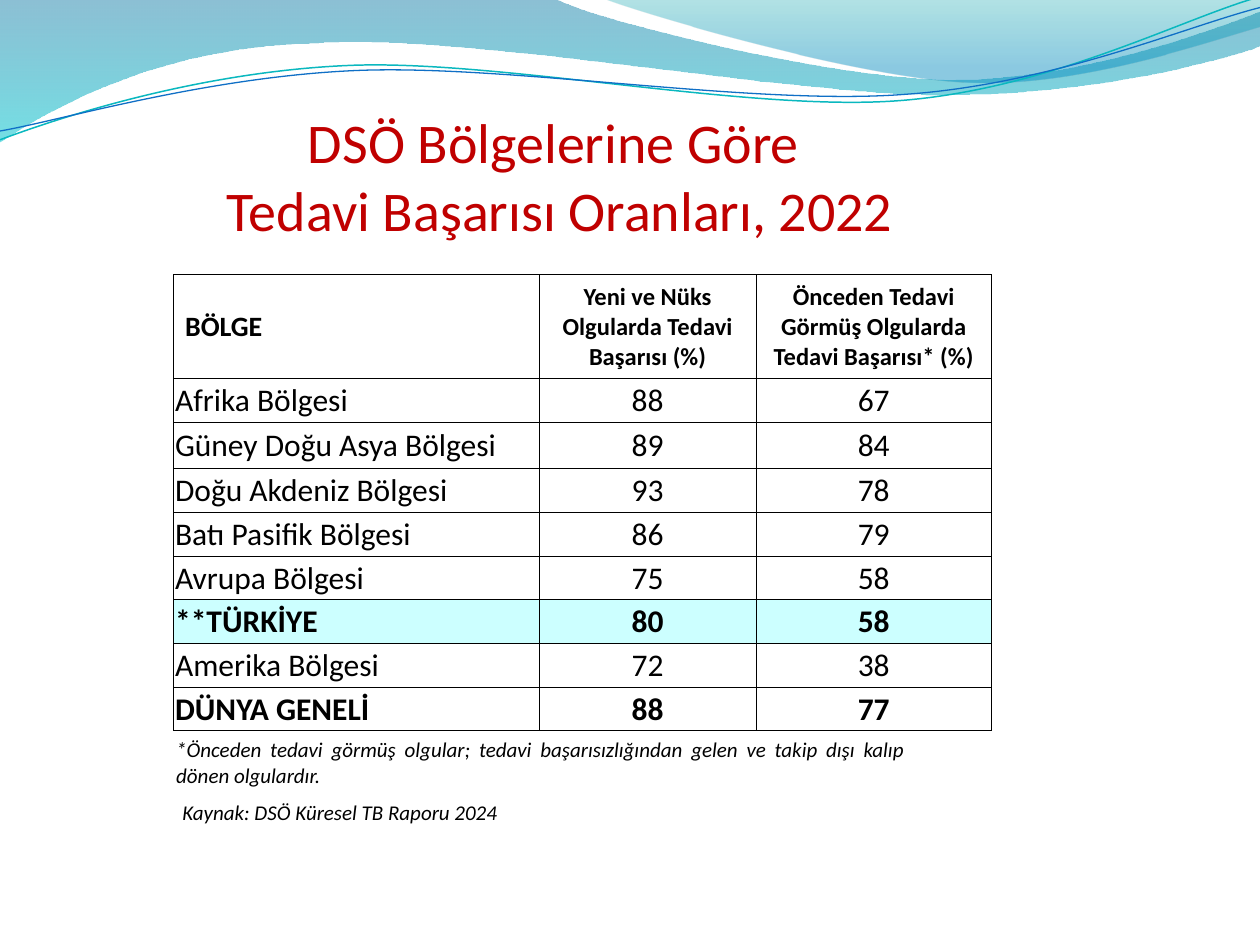
from lxml import etree
from pptx import Presentation
from pptx.dml.color import RGBColor
from pptx.enum.text import MSO_ANCHOR, MSO_AUTO_SIZE, PP_ALIGN
from pptx.oxml.ns import qn
from pptx.util import Inches, Pt

LEFT, CENTER, JUSTIFY = PP_ALIGN.LEFT, PP_ALIGN.CENTER, PP_ALIGN.JUSTIFY
MIDDLE = MSO_ANCHOR.MIDDLE
NO_FIT = MSO_AUTO_SIZE.NONE
FONT = "Calibri"
TITLE_ONLY = 5

COLORS = {
    "title": "C00000", "text": "000000", "border": "000000",
    "highlight": "CCFFFF", "deep": "0074A1", "aqua": "00C6CF",
    "teal": "00A1A9", "azure": "008BBF",
    "teal_line": "0AB8BF", "blue_line": "0F6FC6",
}

WAVE_BAND = [
    (0, 0), (4.4, -0.01),
    (4.76, 0.17, 6.64, 0.63, 7.58, 0.63), (8.53, 0.63, 9.58, 0.26, 10, 0.09),
    (10.01, 0.36),
    (9.83, 0.44, 8.7, 0.76, 7.46, 0.75), (6.22, 0.75, 3.82, 0.28, 2.57, 0.34),
    (1.29, 0.36, 0.46, 0.83, -0.01, 1.13), (0, 0),
]
WAVE_CORNER = [
    (4.79, -0.01),
    (5.09, 0.11, 6.82, 0.62, 7.69, 0.65), (8.56, 0.69, 9.61, 0.32, 10, 0.21),
    (10, 0), (4.79, -0.01),
]
TEAL_WAVE = [
    (0, 1.11),
    (0.48, 0.93, 1.58, 0.57, 2.77, 0.52), (3.95, 0.47, 5.93, 0.89, 7.13, 0.8),
    (8.33, 0.71, 9.38, 0.15, 9.98, -0.02),
]
BLUE_WAVE = [
    (0, 1.04),
    (0.47, 0.96, 1.64, 0.61, 2.83, 0.56), (4.03, 0.51, 5.97, 0.84, 7.17, 0.75),
    (8.36, 0.67, 9.41, 0.21, 10, 0.06),
]

HEADERS = [
    "BÖLGE",
    "Yeni ve Nüks Olgularda Tedavi Başarısı (%)",
    "Önceden Tedavi Görmüş Olgularda Tedavi Başarısı* (%)",
]
REGIONS = [
    ("Afrika Bölgesi", 88, 67),
    ("Güney Doğu Asya Bölgesi", 89, 84),
    ("Doğu Akdeniz Bölgesi", 93, 78),
    ("Batı Pasifik Bölgesi", 86, 79),
    ("Avrupa Bölgesi", 75, 58),
    ("**TÜRKİYE", 80, 58),
    ("Amerika Bölgesi", 72, 38),
    ("DÜNYA GENELİ", 88, 77),
]
HIGHLIGHTED = "**TÜRKİYE"
BOLD_REGIONS = (HIGHLIGHTED, "DÜNYA GENELİ")
COL_WIDTHS = [2.9, 1.72, 1.87]
TABLE_HEIGHT = 3.62
TALL_ROWS = [0.82, 0.35, 0.37]
ROW_HEIGHTS = TALL_ROWS + [(TABLE_HEIGHT - sum(TALL_ROWS)) / 6] * 6


def rgb(name):
    return RGBColor.from_string(COLORS[name])


def set_text(tf, text, size=12, color="text", bold=False, italic=False,
             align=LEFT):
    for i, line in enumerate(text.split("\n")):
        p = tf.add_paragraph() if i else tf.paragraphs[0]
        p.alignment = align
        r = p.add_run()
        r.text = line
        r.font.name = FONT
        r.font.size = Pt(size)
        r.font.bold = bold
        r.font.italic = italic
        r.font.color.rgb = rgb(color)


def add_wave(slide, segments, closed):
    ends = [(Inches(s[-2]), Inches(s[-1])) for s in segments]
    builder = slide.shapes.build_freeform(*ends[0], scale=1)
    builder.add_line_segments(ends[1:], close=closed)
    sp = builder.convert_to_shape()
    sp.shadow.inherit = False
    outline = sp._element.spPr.find(".//" + qn("a:path"))
    for line, segment in zip(outline.findall(qn("a:lnTo")), segments[1:]):
        if len(segment) == 6:
            curve = etree.Element(qn("a:cubicBezTo"))
            for x, y in zip(segment[::2], segment[1::2]):
                etree.SubElement(curve, qn("a:pt"),
                                 x=str(Inches(x) - sp.left),
                                 y=str(Inches(y) - sp.top))
            outline.replace(line, curve)
    return sp


def add_filled_wave(slide, segments, stops):
    sp = add_wave(slide, segments, True)
    sp.line.fill.background()
    sp.fill.gradient()
    sp.fill.gradient_angle = 270
    for stop, (position, color, alpha) in zip(sp.fill.gradient_stops, stops):
        stop.position = position
        stop.color.rgb = rgb(color)
    fills = sp._element.spPr.iter(qn("a:srgbClr"))
    for clr, (position, color, alpha) in zip(fills, stops):
        etree.SubElement(clr, qn("a:alpha"), val=str(alpha * 1000))


def add_line_wave(slide, segments, color, width):
    sp = add_wave(slide, segments, False)
    sp.fill.background()
    sp.line.color.rgb = rgb(color)
    sp.line.width = Pt(width)


def add_title(slide, text):
    sp = slide.shapes.title
    sp.left, sp.top = Inches(1.03), Inches(0.92)
    sp.width, sp.height = Inches(6.83), Inches(0.89)
    tf = sp.text_frame
    tf.auto_size = NO_FIT
    tf.vertical_anchor = MIDDLE
    tf.margin_left = tf.margin_right = tf.margin_bottom = 0
    tf.margin_top = Inches(0.05)
    set_text(tf, text, size=32, color="title", align=CENTER)


def add_note(slide, text, x, y, w, h, align=LEFT):
    sp = slide.shapes.add_textbox(Inches(x), Inches(y), Inches(w), Inches(h))
    sp.text_frame.word_wrap = True
    set_text(sp.text_frame, text, italic=True, align=align)


def set_borders(cell):
    tc_pr = cell._tc.get_or_add_tcPr()
    for i, side in enumerate(("lnL", "lnR", "lnT", "lnB")):
        ln = etree.Element(qn(f"a:{side}"), w=str(Pt(0.5)))
        fill = etree.SubElement(ln, qn("a:solidFill"))
        etree.SubElement(fill, qn("a:srgbClr"), val=COLORS["border"])
        tc_pr.insert(i, ln)


def fill_cell(cell, text, margin_left=0.01, highlight=False, **fmt):
    cell.vertical_anchor = MIDDLE
    cell.margin_left = Inches(margin_left)
    cell.margin_right = cell.margin_top = Inches(0.01)
    cell.margin_bottom = 0
    if highlight:
        cell.fill.solid()
        cell.fill.fore_color.rgb = rgb("highlight")
    else:
        cell.fill.background()
    set_borders(cell)
    set_text(cell.text_frame, text, **fmt)


def add_rates_table(slide):
    table = slide.shapes.add_table(
        len(ROW_HEIGHTS), len(COL_WIDTHS), Inches(1.38), Inches(2.18),
        Inches(sum(COL_WIDTHS)), Inches(TABLE_HEIGHT)).table
    table.horz_banding = False
    for column, width in zip(table.columns, COL_WIDTHS):
        column.width = Inches(width)
    for row, height in zip(table.rows, ROW_HEIGHTS):
        row.height = Inches(height)
    for c, header in enumerate(HEADERS):
        fill_cell(table.cell(0, c), header, bold=True,
                  margin_left=0.01 if c else 0.09,
                  size=14 if c else 16, align=CENTER if c else LEFT)
    for r, values in enumerate(REGIONS, 1):
        for c, value in enumerate(values):
            fill_cell(table.cell(r, c), str(value), size=18,
                      bold=values[0] in BOLD_REGIONS,
                      highlight=values[0] == HIGHLIGHTED,
                      align=CENTER if c else LEFT)


def main():
    prs = Presentation()
    prs.slide_width, prs.slide_height = Inches(10), Inches(7.5)
    slide = prs.slides.add_slide(prs.slide_layouts[TITLE_ONLY])
    add_filled_wave(slide, WAVE_BAND, [(0, "deep", 45), (1, "aqua", 55)])
    add_filled_wave(slide, WAVE_CORNER, [(0, "teal", 30), (0.8, "azure", 45)])
    add_line_wave(slide, TEAL_WAVE, "teal_line", 0.85)
    add_line_wave(slide, BLUE_WAVE, "blue_line", 0.75)
    add_title(slide, "DSÖ Bölgelerine Göre \nTedavi Başarısı Oranları, 2022")
    add_note(slide, "*Önceden tedavi görmüş olgular; tedavi başarısızlığından "
             "gelen ve takip dışı kalıp dönen olgulardır.",
             1.3, 5.8, 5.98, 0.5, align=JUSTIFY)
    add_note(slide, "Kaynak: DSÖ Küresel TB Raporu 2024", 1.35, 6.3, 2.76, 0.3)
    add_rates_table(slide)
    prs.save("out.pptx")


if __name__ == "__main__":
    main()
